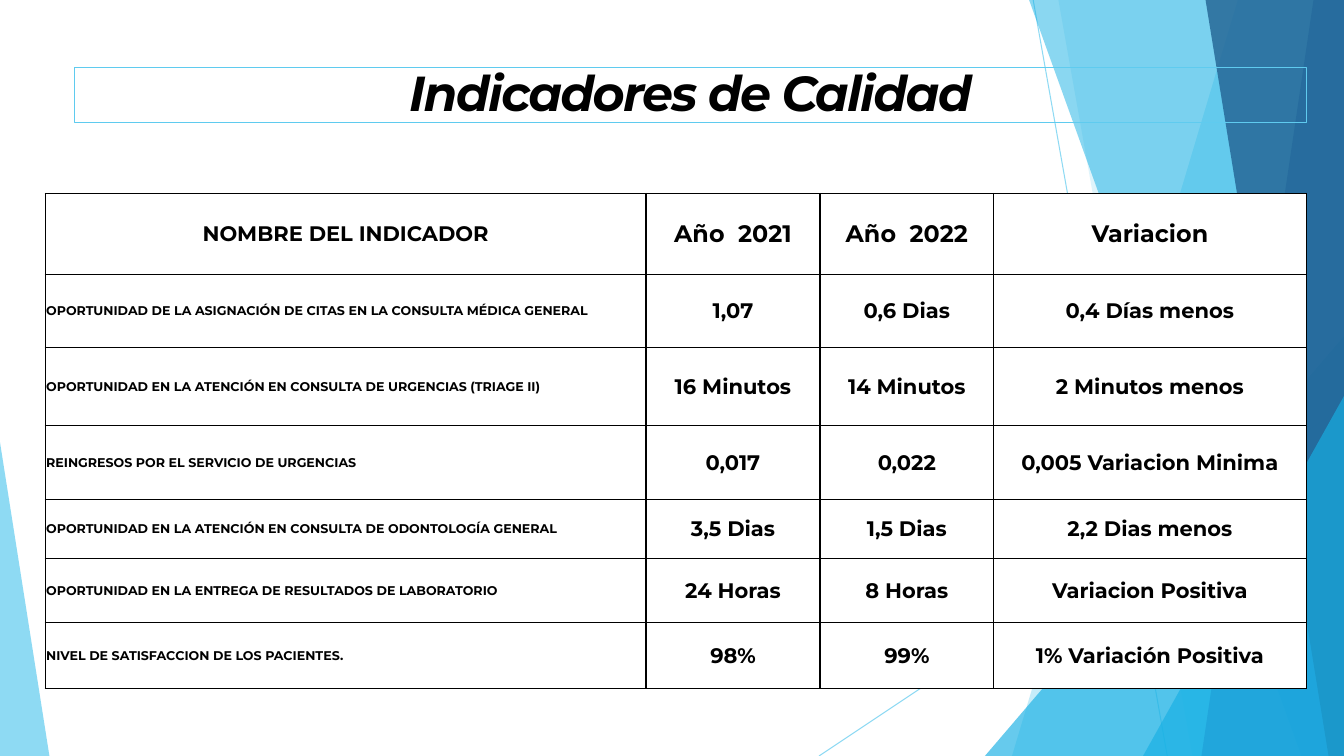
from dataclasses import dataclass

from lxml.etree import SubElement
from pptx import Presentation
from pptx.dml.color import RGBColor
from pptx.enum.shapes import MSO_CONNECTOR, MSO_SHAPE
from pptx.enum.text import MSO_ANCHOR, MSO_AUTO_SIZE, PP_ALIGN
from pptx.oxml.ns import qn
from pptx.util import Pt


@dataclass(frozen=True)
class Theme:
    font: str = "Montserrat"
    ink: str = "000000"
    paper: str = "FFFFFF"
    sky: str = "5FCBEF"
    cyan: str = "17B0E4"
    blue: str = "2E83C3"
    navy: str = "226292"
    title_size: float = 35.1
    year_size: float = 17
    value_size: float = 15
    label_size: float = 9


THEME = Theme()
SLIDE_BOX = (0, 0, 960, 540)
TITLE_BOX = (53.2, 48.2, 880, 39.4)
TABLE_ORIGIN = (32.3, 138.1)

COLUMN_WIDTHS = (429.2, 124.2, 124.2, 223.1)
ROW_HEIGHTS = (57.9, 52.1, 55.8, 52.9, 42.1, 45.7, 47)
INDICATORS = (
    ("NOMBRE DEL INDICADOR", "Año  2021", "Año  2022", "Variacion"),
    ("OPORTUNIDAD DE LA ASIGNACIÓN DE CITAS EN LA CONSULTA MÉDICA GENERAL",
     "1,07", "0,6 Dias", "0,4 Días menos"),
    ("OPORTUNIDAD EN LA ATENCIÓN EN CONSULTA DE URGENCIAS (TRIAGE II)",
     "16 Minutos", "14 Minutos", "2 Minutos menos"),
    ("REINGRESOS POR EL SERVICIO DE URGENCIAS",
     "0,017", "0,022", "0,005 Variacion Minima"),
    ("OPORTUNIDAD EN LA ATENCIÓN EN CONSULTA DE ODONTOLOGÍA GENERAL",
     "3,5 Dias", "1,5 Dias", "2,2 Dias menos"),
    ("OPORTUNIDAD EN LA ENTREGA DE RESULTADOS DE LABORATORIO",
     "24 Horas", "8 Horas", "Variacion Positiva"),
    ("NIVEL DE SATISFACCION DE LOS PACIENTES.",
     "98%", "99%", "1% Variación Positiva"),
)


def apply_format(target, values):
    for name, value in values.items():
        setattr(target, name, value)


def set_opacity(element, percent):
    """Make every colour inside the element partly transparent."""
    for color in element.iter(qn("a:srgbClr")):
        SubElement(color, qn("a:alpha"), val=str(percent * 1000))


def paint(facet, color, opacity):
    facet.shadow.inherit = False
    facet.fill.solid()
    facet.fill.fore_color.rgb = RGBColor.from_string(color)
    facet.line.fill.background()
    set_opacity(facet.element.spPr, opacity)


def add_ray(slide, start, end):
    ray = slide.shapes.add_connector(
        MSO_CONNECTOR.STRAIGHT, *map(Pt, start + end))
    ray.line.color.rgb = RGBColor.from_string(THEME.sky)
    ray.line.width = Pt(0.75)
    set_opacity(ray.element.spPr, 70)
    SubElement(ray.element.spPr, qn("a:effectLst"))


def add_band(slide, box, top_x, bottom_x, color, opacity):
    """Fill the box from a slanted left edge to its right side."""
    left, top, width, height = box
    right, bottom = left + width, top + height
    corners = [(right, top), (right, bottom), (left + bottom_x, bottom)]
    outline = slide.shapes.build_freeform(Pt(left + top_x), Pt(top))
    outline.add_line_segments([(Pt(x), Pt(y)) for x, y in corners])
    paint(outline.convert_to_shape(), color, opacity)


def add_wedge(slide, box, width, height, apex, color, opacity):
    """Place a right triangle in a bottom corner; apex 0 is left, 1 right."""
    left = box[0] + apex * (box[2] - width)
    top = box[1] + box[3] - height
    wedge = slide.shapes.add_shape(
        MSO_SHAPE.ISOSCELES_TRIANGLE, *map(Pt, (left, top, width, height)))
    wedge.adjustments[0] = apex
    paint(wedge, color, opacity)


def add_backdrop(slide, box):
    left, top, width, height = box
    right, bottom = left + width, top + height
    add_ray(slide, (left + 738, top), (left + 833.8, bottom))
    add_ray(slide, (right, top + 290.2), (left + 585, bottom))
    add_band(slide, box, 884.2, 722.9, THEME.sky, 36)
    add_band(slide, box, 756, 851.8, THEME.sky, 20)
    add_wedge(slide, box, 256.5, 300, 1, THEME.cyan, 66)
    add_band(slide, box, 735.1, 929.5, THEME.cyan, 50)
    add_band(slide, box, 938.2, 858.2, THEME.blue, 70)
    add_band(slide, box, 861.1, 949, THEME.navy, 80)
    add_wedge(slide, box, 143.5, 257, 1, THEME.cyan, 66)
    add_wedge(slide, box, 35.3, 224, 0, THEME.sky, 70)


def write_text(paragraph, text, size, align):
    paragraph.alignment = align
    run = paragraph.add_run()
    run.text = text
    apply_format(run.font, {"name": THEME.font, "size": Pt(size), "bold": True})
    run.font.color.rgb = RGBColor.from_string(THEME.ink)
    return run


def add_title(slide, box):
    heading = slide.shapes.title
    # Bring the heading in front of the backdrop.
    heading.element.getparent().append(heading.element)
    apply_format(heading, dict(zip(("left", "top", "width", "height"),
                                   map(Pt, box))))
    heading.line.color.rgb = RGBColor.from_string(THEME.sky)
    heading.line.width = Pt(0.75)
    apply_format(heading.text_frame, {
        "auto_size": MSO_AUTO_SIZE.NONE, "word_wrap": True,
        "vertical_anchor": MSO_ANCHOR.TOP, "margin_left": 0,
        "margin_right": 0, "margin_top": Pt(4.6), "margin_bottom": 0})
    paragraph = heading.text_frame.paragraphs[0]
    apply_format(paragraph, {"line_spacing": 0.8, "space_before": Pt(0)})
    run = write_text(paragraph, "Indicadores de Calidad", THEME.title_size,
                     PP_ALIGN.CENTER)
    run.font.italic = True
    run.font._element.set("spc", "-120")


def add_borders(cell):
    properties = cell._tc.get_or_add_tcPr()
    for position, side in enumerate(("a:lnL", "a:lnR", "a:lnT", "a:lnB")):
        border = SubElement(properties, qn(side), w=str(Pt(1)))
        properties.insert(position, border)
        fill = SubElement(border, qn("a:solidFill"))
        SubElement(fill, qn("a:srgbClr"), val=THEME.ink)


def text_style(row, column):
    """Return the type size and alignment for a table position."""
    if row == 0:
        size = THEME.year_size if column else THEME.value_size
        return size, PP_ALIGN.CENTER
    if column:
        return THEME.value_size, PP_ALIGN.CENTER
    last_row = row == len(INDICATORS) - 1
    return THEME.label_size, PP_ALIGN.JUSTIFY if last_row else PP_ALIGN.LEFT


def add_indicator_table(slide, box):
    grid = slide.shapes.add_table(
        len(INDICATORS), len(COLUMN_WIDTHS), *map(Pt, box)).table
    apply_format(grid, {"first_row": False, "horz_banding": False})
    for column, width in zip(grid.columns, COLUMN_WIDTHS):
        column.width = Pt(width)
    for row, height in zip(grid.rows, ROW_HEIGHTS):
        row.height = Pt(height)
    for r, indicator in enumerate(INDICATORS):
        for c, text in enumerate(indicator):
            cell = grid.cell(r, c)
            apply_format(cell, {
                "vertical_anchor": MSO_ANCHOR.MIDDLE, "margin_left": Pt(0.7),
                "margin_right": Pt(0.7), "margin_top": Pt(0.7),
                "margin_bottom": 0})
            if r == 0 and c < 3:
                cell.fill.background()
            else:
                cell.fill.solid()
                cell.fill.fore_color.rgb = RGBColor.from_string(THEME.paper)
            add_borders(cell)
            write_text(cell.text_frame.paragraphs[0], text, *text_style(r, c))


def main():
    deck = Presentation()
    deck.slide_width, deck.slide_height = map(Pt, SLIDE_BOX[2:])
    slide = deck.slides.add_slide(deck.slide_layouts[5])
    add_backdrop(slide, SLIDE_BOX)
    add_title(slide, TITLE_BOX)
    add_indicator_table(
        slide, (*TABLE_ORIGIN, sum(COLUMN_WIDTHS), sum(ROW_HEIGHTS)))
    deck.save("out.pptx")


if __name__ == "__main__":
    main()
